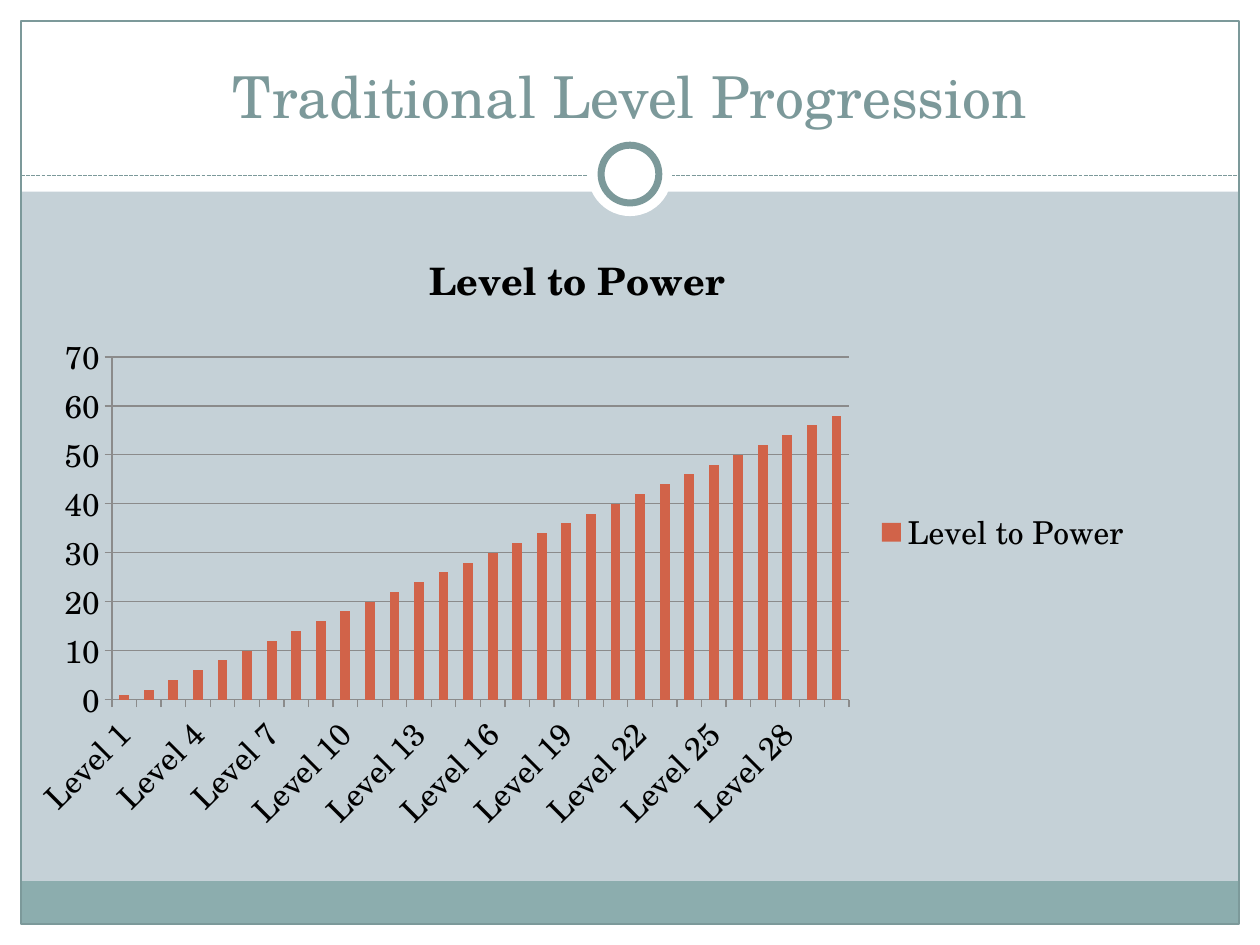
from pptx import Presentation
from pptx.chart.data import CategoryChartData
from pptx.dml.color import RGBColor
from pptx.enum.chart import XL_CHART_TYPE as ChartType, XL_LEGEND_POSITION as LegendSpot, XL_TICK_MARK as Tick
from pptx.enum.dml import MSO_LINE_DASH_STYLE as Dash
from pptx.enum.shapes import MSO_CONNECTOR as Connector, MSO_SHAPE as Shape
from pptx.enum.text import MSO_ANCHOR as Anchor, PP_ALIGN as Align
from pptx.oxml.ns import qn
from pptx.util import Pt
from lxml.etree import SubElement

COLOURS = {
    "background": "C5D1D7",
    "white": "FFFFFF",
    "band": "8CADAE",
    "accent": "7C999A",
    "bar": "D16349",
    "text": "000000",
    "grid": "8B8B8B",
}


class SlideBuilder:
    """Hold the style and the current slide, and add each kind of element."""

    font_name = "TeX Gyre Schola"

    def __init__(self, deck):
        self.page = deck.slides.add_slide(deck.slide_layouts[6])
        self.paint(self.page.background.fill, "background")

    def colour(self, name):
        return RGBColor.from_string(COLOURS[name])

    def paint(self, fill, name):
        fill.solid()
        fill.fore_color.rgb = self.colour(name)

    def format(self, target, values):
        for name, value in values.items():
            setattr(target, name, value)

    def style_font(self, font, size, colour, bold=False):
        self.format(font, {"name": self.font_name, "size": Pt(size), "bold": bold})
        font.color.rgb = self.colour(colour)

    def style_line(self, line, colour, width):
        self.paint(line.fill, colour)
        line.width = Pt(width)

    def shape(self, kind, bounds, fill=None, line=None, width=0.75):
        shape = self.page.shapes.add_shape(kind, *map(Pt, bounds))
        shape.shadow.inherit = False
        if fill:
            self.paint(shape.fill, fill)
        else:
            shape.fill.background()
        if line:
            self.style_line(shape.line, line, width)
        else:
            shape.line.fill.background()

    def circle(self, centre, size, **style):
        left, top = (middle - size / 2 for middle in centre)
        self.shape(Shape.OVAL, (left, top, size, size), **style)

    def dashed_line(self, start, end):
        rule = self.page.shapes.add_connector(Connector.STRAIGHT, *map(Pt, start + end))
        self.style_line(rule.line, "accent", 0.75)
        rule.line.dash_style = Dash.SQUARE_DOT
        SubElement(rule._element.spPr, qn("a:effectLst"))

    def title(self, words, bounds):
        box = self.page.shapes.add_textbox(*map(Pt, bounds))
        self.format(box.text_frame, {"word_wrap": True, "vertical_anchor": Anchor.BOTTOM})
        para = box.text_frame.paragraphs[0]
        para.alignment = Align.CENTER
        span = para.add_run()
        span.text = words
        self.style_font(span.font, 33, "accent")

    def column_chart(self, name, categories, values, bounds):
        data = CategoryChartData()
        data.categories = categories
        data.add_series(name, values)
        frame = self.page.shapes.add_chart(ChartType.COLUMN_CLUSTERED, *map(Pt, bounds), data)
        chart = frame.chart
        self.style_font(chart.font, 18, "text")
        self.format(chart, {"has_title": True, "has_legend": True})
        chart.chart_title.text_frame.text = name
        span = chart.chart_title.text_frame.paragraphs[0].runs[0]
        self.style_font(span.font, 21.6, "text", bold=True)
        self.format(chart.legend, {"position": LegendSpot.RIGHT, "include_in_layout": False})
        for axis in (chart.category_axis, chart.value_axis):
            self.format(axis, {"major_tick_mark": Tick.OUTSIDE, "minor_tick_mark": Tick.NONE})
            self.style_line(axis.format.line, "grid", 0.75)
        self.format(chart.value_axis, {"has_major_gridlines": True})
        self.style_line(chart.value_axis.major_gridlines.format.line, "grid", 0.75)
        plot = chart.plots[0]
        self.format(plot, {"gap_width": 150, "vary_by_categories": False})
        self.paint(plot.series[0].format.fill, "bar")


def main():
    deck = Presentation()
    width, height, margin = 720, 540, 12
    deck.slide_width, deck.slide_height = Pt(width), Pt(height)
    slide = SlideBuilder(deck)

    borders = [
        (0, height - margin, width, margin),
        (0, 0, width, 109.5),
        (0, 0, margin, height),
        (width - margin, 0, margin, height),
    ]
    for bounds in borders:
        slide.shape(Shape.RECTANGLE, bounds, fill="white")
    inner_width = width - 2 * margin
    slide.shape(Shape.RECTANGLE, (margin, 503.5, inner_width, 24.5), fill="band")
    slide.shape(Shape.RECTANGLE, (margin, margin, inner_width, height - 2 * margin), line="accent")

    slide.dashed_line((margin, 100.5), (width - margin, 100.5))
    centre = (width / 2, 99.5)
    slide.circle(centre, 48, fill="white")
    slide.circle(centre, 33, fill="white", line="accent", width=4)

    slide.title("Traditional Level Progression", (24, 18, 672, 60))
    levels = [f"Level {number}" for number in range(1, 30)] + ["Level n.."]
    power = [1, *range(2, 60, 2)]
    slide.column_chart("Level to Power", levels, power, (6, 126, 648, 356.4))
    deck.save("out.pptx")


if __name__ == "__main__":
    main()
